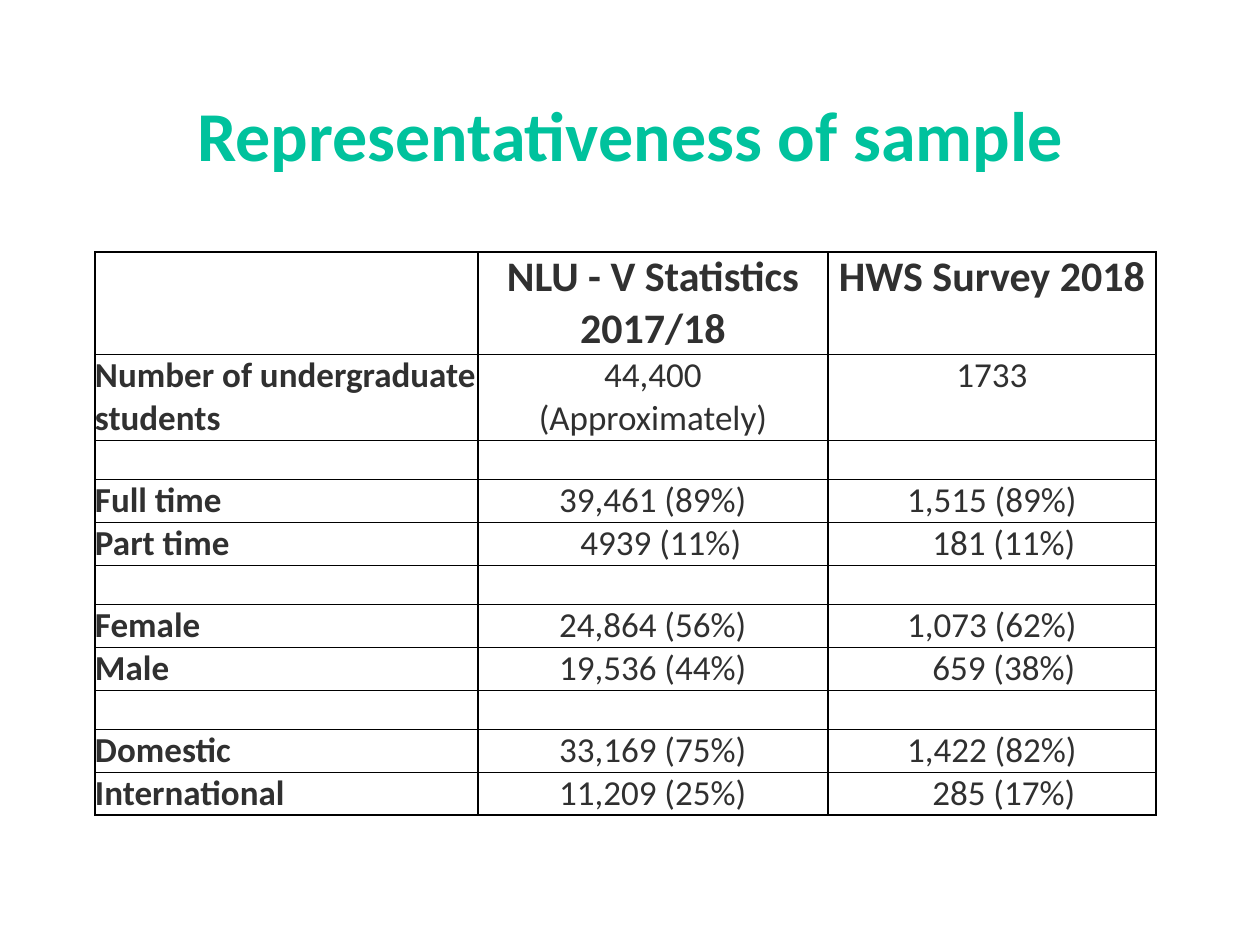
from dataclasses import dataclass
from lxml import etree
from pptx import Presentation, util as u
from pptx.dml.color import RGBColor
from pptx.enum import text
from pptx.oxml.ns import qn

SCALE = 914400 / 126


def px(n):
    return u.Emu(round(n * SCALE))


@dataclass
class Theme:
    font: str = "Calibri"
    title: str = "00C29D"
    ink: str = "303030"
    line: str = "000000"
    page: str = "FFFFFF"
    big: int = 40
    head: int = 24
    body: int = 20
    gap: int = 18


class Deck:
    def __init__(self, theme):
        self.theme = theme
        self.show = Presentation()
        self.show.slide_width, self.show.slide_height = px(1260), px(945)
        self.slide = self.show.slides.add_slide(self.show.slide_layouts[5])

    def style(self, par, size, color, bold, align):
        font = par.font
        font.name, font.size, font.bold = self.theme.font, u.Pt(size), bold
        font.color.rgb = RGBColor.from_string(color)
        par.alignment = align

    def title(self, words, left, top, width, height):
        box = self.slide.shapes.title
        box.left, box.top, box.width, box.height = map(px, (left, top, width, height))
        frame = box.text_frame
        frame.text = words
        frame.vertical_anchor = text.MSO_ANCHOR.MIDDLE
        self.style(frame.paragraphs[0], self.theme.big, self.theme.title, True,
                   text.PP_ALIGN.CENTER)

    def border(self, cell):
        props = cell._tc.get_or_add_tcPr()
        for spot, side in enumerate(("lnL", "lnR", "lnT", "lnB")):
            line = etree.Element(qn("a:" + side), w=str(u.Pt(1)))
            fill = etree.SubElement(line, qn("a:solidFill"))
            etree.SubElement(fill, qn("a:srgbClr"), val=self.theme.line)
            props.insert(spot, line)

    def cell(self, cell, words, size, bold, align, indent):
        cell.margin_left = px(indent)
        cell.margin_right = cell.margin_top = cell.margin_bottom = 0
        cell.fill.solid()
        cell.fill.fore_color.rgb = RGBColor.from_string(self.theme.page)
        self.border(cell)
        cell.text = words
        for par in cell.text_frame.paragraphs:
            self.style(par, size, self.theme.ink, bold, align)

    def table(self, rows, left, top, widths, indents):
        theme = self.theme
        highs = [102, 86] + [43 if any(row) else 39 for row in rows[2:]]
        grid = self.slide.shapes.add_table(
            len(rows), len(widths), px(left), px(top), px(sum(widths)), px(sum(highs))).table
        grid.first_row = grid.horz_banding = False
        for col, width in zip(grid.columns, widths):
            col.width = px(width)
        for r, row in enumerate(rows):
            grid.rows[r].height = px(highs[r])
            size = theme.gap if not any(row) else theme.head if r == 0 else theme.body
            for c, words in enumerate(row):
                align = text.PP_ALIGN.CENTER if c else text.PP_ALIGN.LEFT
                self.cell(grid.cell(r, c), words, size, r == 0 or c == 0, align,
                          indents.get((r, c), 0))


def main():
    deck = Deck(Theme())
    deck.title("Representativeness of sample", 63, 54, 1134, 158)
    blank = ("", "", "")
    rows = [
        ("", "NLU - V Statistics 2017/18", "HWS Survey 2018"),
        ("Number of undergraduate students", "44,400\n(Approximately)", "1733"),
        blank,
        ("Full time", "39,461 (89%)", "1,515 (89%)"),
        ("Part time", "4939 (11%)", "181 (11%)"),
        blank,
        ("Female", "24,864 (56%)", "1,073 (62%)"),
        ("Male", "19,536 (44%)", "659 (38%)"),
        blank,
        ("Domestic", "33,169 (75%)", "1,422 (82%)"),
        ("International", "11,209 (25%)", "285 (17%)"),
    ]
    indents = {(4, 1): 16, (4, 2): 24, (7, 2): 24, (10, 2): 24}
    deck.table(rows, 95, 252, (383, 350, 328), indents)
    deck.show.save("out.pptx")


if __name__ == "__main__":
    main()
